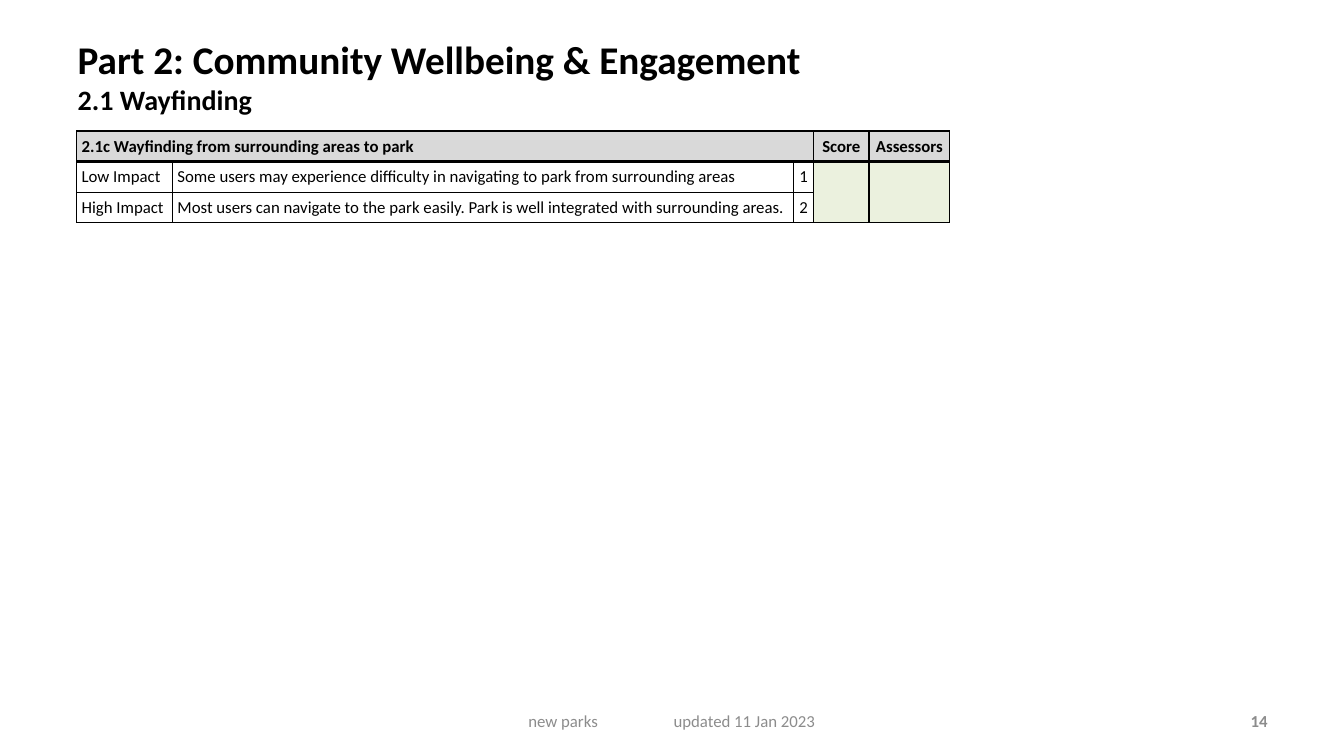
from dataclasses import dataclass
from typing import Optional

import pptx
import pptx.dml.color
import pptx.enum.text
import pptx.oxml
import pptx.oxml.ns
import pptx.util
from pptx.dml.color import RGBColor
from pptx.enum.text import MSO_ANCHOR, PP_ALIGN
from pptx.util import Inches

FONT = "Calibri"
BLACK = RGBColor(0x00, 0x00, 0x00)
GREY = RGBColor(0x8C, 0x8C, 0x8C)
HEADER_FILL = RGBColor(0xD9, 0xD9, 0xD9)
ENTRY_FILL = RGBColor(0xEB, 0xF1, 0xDE)

COLUMN_WIDTHS = (0.95, 6.16, 0.2, 0.55, 0.8)
ROW_HEIGHT = 0.3
CELL_MARGIN = 0.05


@dataclass
class Cell:
    row: int
    col: int
    text: str = ""
    bold: bool = False
    align: PP_ALIGN = PP_ALIGN.LEFT
    fill: Optional[RGBColor] = None
    rows: int = 1
    cols: int = 1


@dataclass
class FooterText:
    text: str
    left: float
    width: float
    align: PP_ALIGN
    bold: bool = False
    inset: float = 0.1
    tab: Optional[float] = None


CELLS = [
    Cell(0, 0, "2.1c Wayfinding from surrounding areas to park", True, fill=HEADER_FILL, cols=3),
    Cell(0, 3, "Score", True, PP_ALIGN.CENTER, HEADER_FILL),
    Cell(0, 4, "Assessors", True, PP_ALIGN.CENTER, HEADER_FILL),
    Cell(1, 0, "Low Impact"),
    Cell(1, 1, "Some users may experience difficulty in navigating to park from surrounding areas"),
    Cell(1, 2, "1", align=PP_ALIGN.CENTER),
    Cell(1, 3, fill=ENTRY_FILL, rows=2),
    Cell(1, 4, fill=ENTRY_FILL, rows=2),
    Cell(2, 0, "High Impact"),
    Cell(2, 1, "Most users can navigate to the park easily. Park is well integrated with surrounding areas."),
    Cell(2, 2, "2", align=PP_ALIGN.CENTER),
]

FOOTERS = [
    FooterText("new parks\tupdated 11 Jan 2023", 4.56, 4.22, PP_ALIGN.LEFT, inset=0.68, tab=1.44),
    FooterText("14", 9.56, 3.11, PP_ALIGN.RIGHT, bold=True),
]


def add_text(p, text: str, *, size: float = 12, bold: bool = False, color: RGBColor = BLACK) -> None:
    r = p.add_run()
    r.text = text
    r.font.name = FONT
    r.font.size = pptx.util.Pt(size)
    r.font.bold = bold
    r.font.color.rgb = color


def set_borders(cell, header: bool, below_header: bool) -> None:
    tcPr = cell._tc.get_or_add_tcPr()
    for side in ("L", "R", "T", "B"):
        thick = (header and side == "B") or (below_header and side == "T")
        width = pptx.util.Pt(2 if thick else 1)
        tcPr.append(pptx.oxml.parse_xml(
            f'<a:ln{side} {pptx.oxml.ns.nsdecls("a")} w="{width}"><a:solidFill>'
            f'<a:srgbClr val="{BLACK}"/></a:solidFill></a:ln{side}>'))


def add_score_table(s) -> None:
    row_count = 3
    table = s.shapes.add_table(
        row_count, len(COLUMN_WIDTHS), Inches(0.76), Inches(1.3),
        Inches(sum(COLUMN_WIDTHS)), Inches(ROW_HEIGHT * row_count)).table
    table.first_row = table.horz_banding = False
    for column, width in zip(table.columns, COLUMN_WIDTHS):
        column.width = Inches(width)
    for i, row in enumerate(table.rows):
        row.height = Inches(ROW_HEIGHT)
        for cell in row.cells:
            set_borders(cell, i == 0, i == 1)
            cell.fill.background()
            cell.vertical_anchor = MSO_ANCHOR.MIDDLE
            cell.margin_left = cell.margin_right = Inches(CELL_MARGIN)
            cell.margin_top = cell.margin_bottom = Inches(CELL_MARGIN)
            # Keep empty cells as low as the filled ones
            cell.text_frame.paragraphs[0]._p.get_or_add_endParaRPr().set("sz", "1200")
    for item in CELLS:
        cell = table.cell(item.row, item.col)
        if item.rows > 1 or item.cols > 1:
            cell.merge(table.cell(item.row + item.rows - 1, item.col + item.cols - 1))
        if item.fill is not None:
            cell.fill.solid()
            cell.fill.fore_color.rgb = item.fill
        if item.text:
            p = cell.text_frame.paragraphs[0]
            p.alignment = item.align
            add_text(p, item.text, bold=item.bold)


def add_footer(s, item: FooterText) -> None:
    sp = s.shapes.add_textbox(Inches(item.left), Inches(6.95), Inches(item.width), Inches(0.4))
    tf = sp.text_frame
    tf.word_wrap = True
    tf.vertical_anchor = MSO_ANCHOR.MIDDLE
    tf.margin_left = Inches(item.inset)
    p = tf.paragraphs[0]
    p.alignment = item.align
    if item.tab is not None:
        p._p.get_or_add_pPr().append(pptx.oxml.parse_xml(
            f'<a:tabLst {pptx.oxml.ns.nsdecls("a")}>'
            f'<a:tab pos="{Inches(item.tab)}" algn="l"/></a:tabLst>'))
    add_text(p, item.text, bold=item.bold, color=GREY)


def add_title(s) -> None:
    sp = s.shapes.title
    sp.left, sp.top, sp.width, sp.height = (Inches(v) for v in (0.67, 0.3, 10.36, 0.99))
    tf = sp.text_frame
    tf.word_wrap = True
    tf.auto_size = pptx.enum.text.MSO_AUTO_SIZE.NONE
    tf.vertical_anchor = MSO_ANCHOR.TOP
    p = tf.paragraphs[0]
    p.alignment = PP_ALIGN.LEFT
    add_text(p, "Part 2: Community Wellbeing & Engagement", size=28, bold=True)
    p.add_line_break()
    add_text(p, "2.1 Wayfinding", size=20, bold=True)


def main() -> None:
    prs = pptx.Presentation()
    prs.slide_width, prs.slide_height = Inches(13.33), Inches(7.5)
    s = prs.slides.add_slide(prs.slide_layouts[5])

    # Heading
    add_title(s)

    # Scoring table
    add_score_table(s)

    # Footer and page number
    for item in FOOTERS:
        add_footer(s, item)

    prs.save("out.pptx")


if __name__ == "__main__":
    main()
